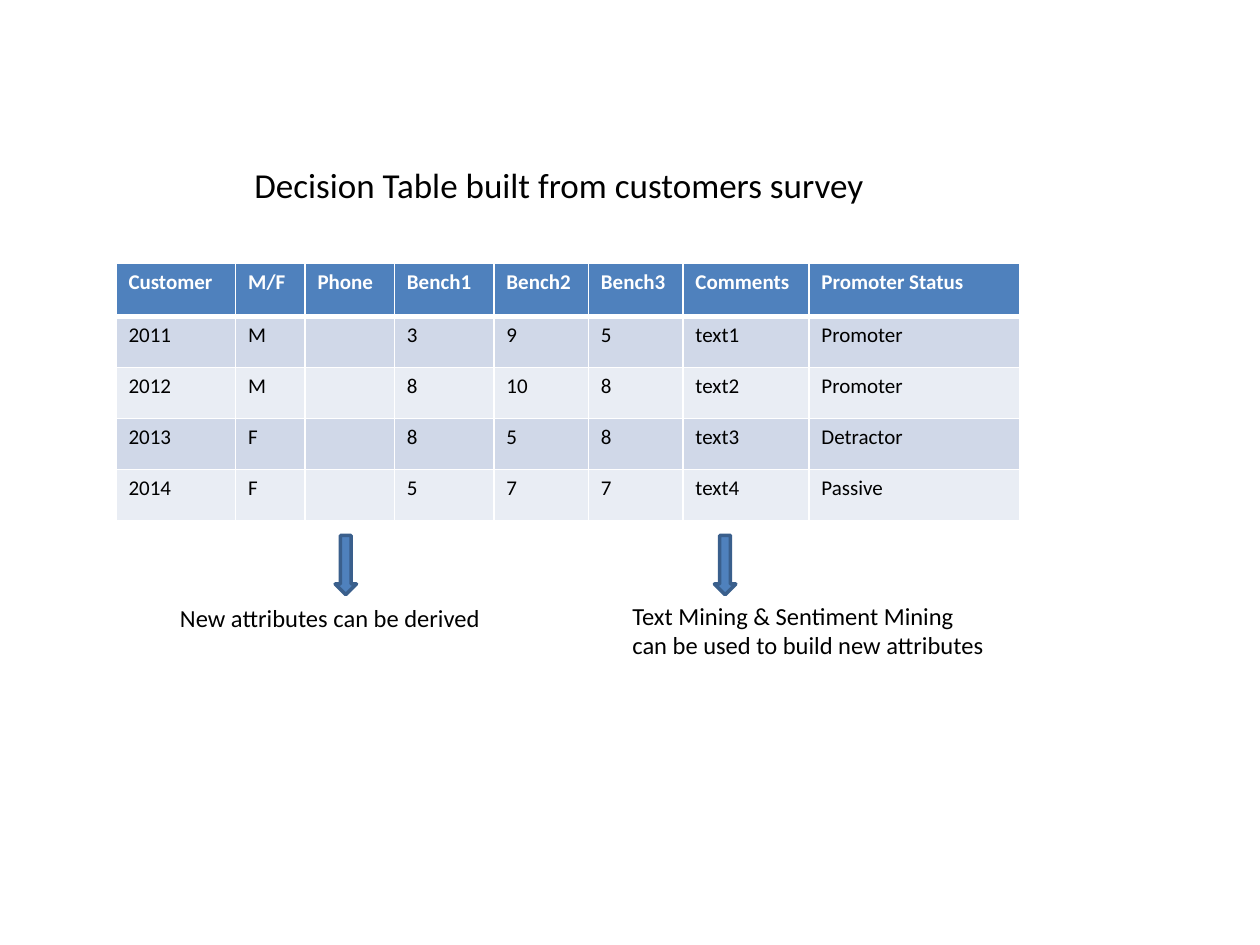
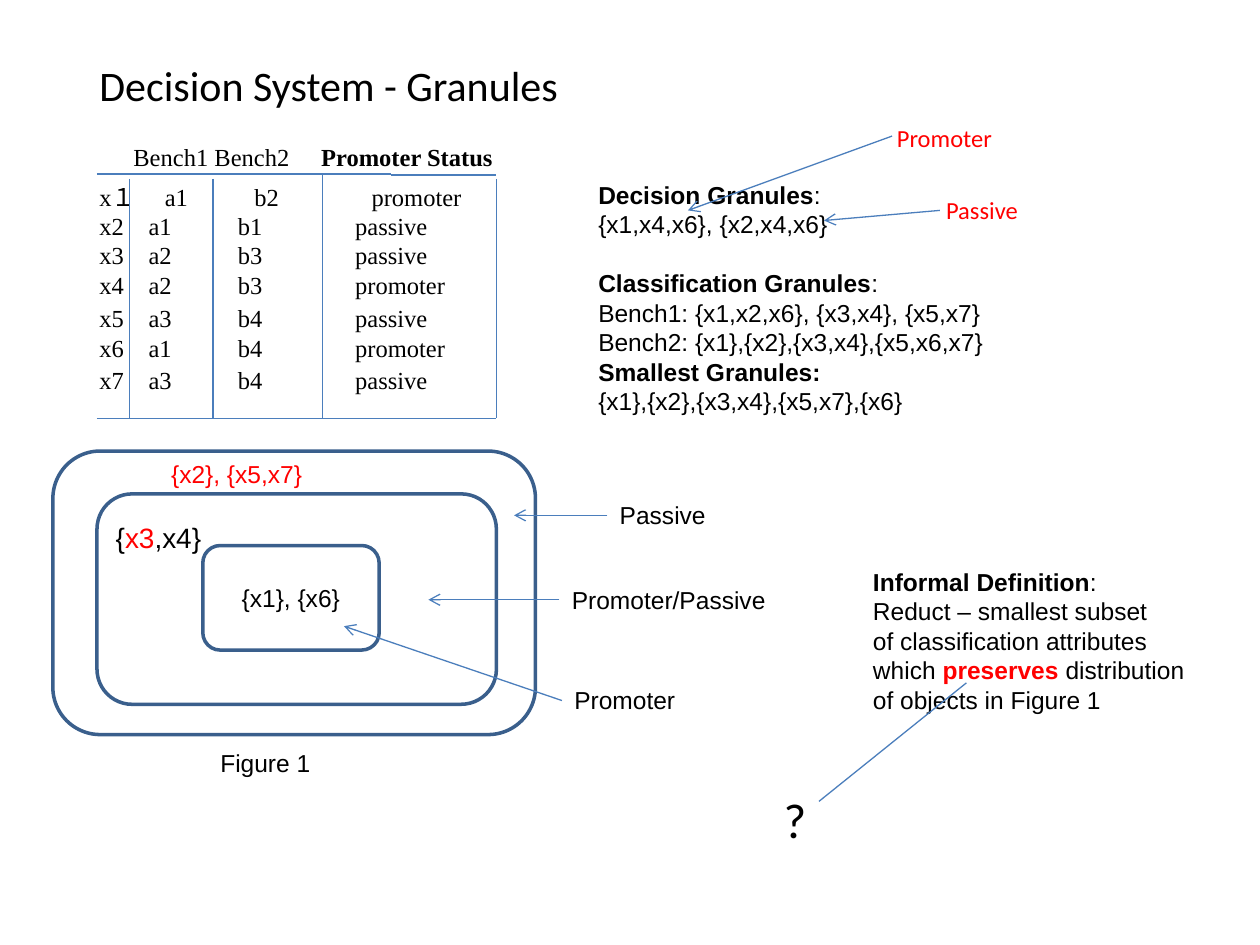
from dataclasses import dataclass
from typing import NamedTuple, Optional

import pptx
import pptx.dml.color
import pptx.enum.shapes
import pptx.enum.text
import pptx.oxml.ns
import pptx.util
from lxml import etree
from pptx.util import Inches

qn = pptx.oxml.ns.qn
SHAPES = pptx.enum.shapes.MSO_SHAPE


@dataclass(frozen=True)
class Theme:
    black: str = "000000"
    white: str = "FFFFFF"
    red: str = "FF0000"
    blue: str = "4F81BD"
    outline: str = "3A5F8C"
    line: str = "4B7EBC"
    bands: tuple = ("D0D8E8", "E9EDF4")
    sans: str = "Calibri"
    arial: str = "Arial"
    serif: str = "Times New Roman"
    cell: int = 12
    body: int = 14
    set_size: int = 16
    table_title: int = 20
    title: int = 24
    question: int = 28


T = Theme()


class Run(NamedTuple):
    text: str
    bold: bool = False
    color: str = T.black


class Para(NamedTuple):
    runs: tuple
    before: float = 0
    spacing: Optional[float] = None
    tabs: tuple = ()


class Box(NamedTuple):
    left: float
    top: float
    width: float
    height: float
    paras: tuple
    font: str = T.arial
    size: int = T.body
    wrap: bool = False


class Line(NamedTuple):
    x1: float
    y1: float
    x2: float
    y2: float
    arrow: bool = False


class Level(NamedTuple):
    """A label of the nested figure and the point its arrow reaches."""
    label: Box
    x: float
    y: float


def plain(*lines: str, color: str = T.black) -> tuple:
    return tuple(Para((Run(line, color=color),)) for line in lines)


def heading(text: str, before: float = 0) -> Para:
    return Para((Run(text, True), Run(":")), before)


def rgb(color: str) -> pptx.dml.color.RGBColor:
    return pptx.dml.color.RGBColor.from_string(color)


def add_run(p, run: Run, font: str, size: int) -> None:
    r = p.add_run()
    r.text = run.text
    r.font.name = font
    r.font.size = pptx.util.Pt(size)
    r.font.bold = run.bold
    r.font.color.rgb = rgb(run.color)


def set_tabs(p, stops: tuple) -> None:
    tab_list = etree.SubElement(p._p.get_or_add_pPr(), qn("a:tabLst"))
    for stop in stops:
        etree.SubElement(tab_list, qn("a:tab"), pos=str(Inches(stop)), algn="l")


def add_box(s, box: Box):
    sp = s.shapes.add_textbox(*map(Inches, box[:4]))
    tf = sp.text_frame
    tf.word_wrap = box.wrap
    tf.auto_size = pptx.enum.text.MSO_AUTO_SIZE.SHAPE_TO_FIT_TEXT
    for i, para in enumerate(box.paras):
        p = tf.add_paragraph() if i else tf.paragraphs[0]
        if para.spacing:
            p.line_spacing = para.spacing
        if para.before:
            p.space_before = pptx.util.Pt(para.before)
        if para.tabs:
            set_tabs(p, para.tabs)
        for run in para.runs:
            add_run(p, run, box.font, box.size)
    return sp


def add_line(s, line: Line):
    cxn = s.shapes.add_connector(pptx.enum.shapes.MSO_CONNECTOR.STRAIGHT,
                                 *map(Inches, line[:4]))
    cxn.line.color.rgb = rgb(T.line)
    cxn.line.width = pptx.util.Pt(0.75)
    if line.arrow:
        etree.SubElement(cxn.line._get_or_add_ln(), qn("a:tailEnd"), type="arrow")
    etree.SubElement(cxn._element.spPr, qn("a:effectLst"))
    return cxn


def add_outlined(s, kind, place: tuple, fill: Optional[str] = None) -> None:
    sp = s.shapes.add_shape(kind, *map(Inches, place))
    sp.shadow.inherit = False
    if fill:
        sp.fill.solid()
        sp.fill.fore_color.rgb = rgb(fill)
    else:
        sp.fill.background()
    sp.line.color.rgb = rgb(T.outline)
    sp.line.width = pptx.util.Pt(2)


def set_borders(cell, top: float, bottom: float) -> None:
    tc_pr = cell._tc.get_or_add_tcPr()
    for side, width in (("L", 1), ("R", 1), ("T", top), ("B", bottom)):
        ln = etree.SubElement(tc_pr, qn(f"a:ln{side}"), w=str(pptx.util.Pt(width)))
        fill = etree.SubElement(ln, qn("a:solidFill"))
        etree.SubElement(fill, qn("a:srgbClr"), val=T.white)


SURVEY = (
    ("Customer", "M/F", "Phone", "Bench1", "Bench2", "Bench3", "Comments",
     "Promoter Status"),
    ("2011", "M", "", "3", "9", "5", "text1", "Promoter"),
    ("2012", "M", "", "8", "10", "8", "text2", "Promoter"),
    ("2013", "F", "", "8", "5", "8", "text3", "Detractor"),
    ("2014", "F", "", "5", "7", "7", "text4", "Passive"),
)
SURVEY_COLUMNS = (0.95, 0.55, 0.71, 0.79, 0.75, 0.75, 1, 1.67)


def add_survey_table(s) -> None:
    table = s.shapes.add_table(len(SURVEY), len(SURVEY_COLUMNS), Inches(0.92),
                               Inches(2.09), Inches(7.17), Inches(2.03)).table
    table.horz_banding = False
    for column, width in zip(table.columns, SURVEY_COLUMNS):
        column.width = Inches(width)
    for i, values in enumerate(SURVEY):
        header = i == 0
        table.rows[i].height = Inches(0.42 if header else 0.4)
        for j, value in enumerate(values):
            cell = table.cell(i, j)
            set_borders(cell, 3 if i == 1 else 1, 3 if header else 1)
            cell.fill.solid()
            cell.fill.fore_color.rgb = rgb(T.blue if header else T.bands[(i - 1) % 2])
            if value:
                run = Run(value, header, T.white if header else T.black)
                add_run(cell.text_frame.paragraphs[0], run, T.sans, T.cell)


def build_survey(s) -> None:
    add_survey_table(s)
    for box in (
        Box(1.92, 1.25, 5.08, 0.44, plain("Decision Table built from customers survey"),
            T.sans, T.table_title),
        Box(1.33, 4.74, 2.65, 0.34, plain("New attributes can be derived"), T.sans),
        Box(4.92, 4.72, 3.02, 0.57, plain("Text Mining & Sentiment Mining",
                                          "can be used to build new attributes"), T.sans),
    ):
        add_box(s, box)
    for left in (2.66, 5.67):
        add_outlined(s, SHAPES.DOWN_ARROW, (left, 4.25, 0.17, 0.47), T.blue)


OBJECTS = (
    ("x１", "a1", "b2", "promoter", 0.9),
    ("x2", "a1", "b1", "passive", 0.5),
    ("x3", "a2", "b3", "passive", 0.6),
    ("x4", "a2", "b3", "promoter", 0.6),
    ("x5", "a3", "b4", "passive", 0.7),
    ("x6", "a1", "b4", "promoter", 0.6),
    ("x7", "a3", "b4", "passive", 0.7),
)
OBJECT_TABS = (0.39, 1.1, 2.03)
FIRST_ROW_SHIFT = 0.13


def object_rows() -> tuple:
    rows = []
    for i, (*values, spacing) in enumerate(OBJECTS):
        shift = 0 if i else FIRST_ROW_SHIFT
        rows.append(Para((Run("\t".join(values)),), 7 if i else 0, spacing,
                         tuple(stop + shift for stop in OBJECT_TABS)))
    return tuple(rows)


def add_object_table(s) -> None:
    header = Para((Run("\tBench1 Bench2\t"), Run("Promoter Status", True)),
                  tabs=(0.77, 2.26))
    add_box(s, Box(0.19, 1.08, 4.25, 0.34, (header,), T.serif, wrap=True))
    add_box(s, Box(0.69, 1.42, 3.75, 1.9, object_rows(), T.serif, wrap=True))
    left, right, bottom = 0.77, 3.94, 3.32
    for line in (Line(left, 1.38, 3.1, 1.38), Line(3.1, 1.39, right, 1.39),
                 Line(left, bottom, right, bottom)):
        add_line(s, line)
    for x, top in ((1.03, 1.42), (1.69, 1.42), (2.56, 1.39), (right, 1.42)):
        add_line(s, Line(x, top, x, bottom))


NESTED_SETS = ((0.42, 3.58, 3.83, 2.25), (0.77, 3.92, 3.17, 1.67),
               (1.61, 4.33, 1.4, 0.83))
LEVELS = (
    Level(Box(4.82, 3.92, 0.89, 0.34, plain("Passive")), 4.08, 4.09),
    Level(Box(4.44, 4.59, 1.75, 0.34, plain("Promoter/Passive")), 3.4, 4.76),
    Level(Box(4.46, 5.39, 1.01, 0.34, plain("Promoter")), 2.73, 4.97),
)


def add_nested_figure(s) -> None:
    for place in NESTED_SETS:
        add_outlined(s, SHAPES.ROUNDED_RECTANGLE, place)
    for level in LEVELS:
        box = level.label
        label = add_box(s, box)
        arrow = add_line(s, Line(box.left, box.top + box.height / 2,
                                 level.x, level.y, True))
        arrow.begin_connect(label, 1)
    boundary = Para((Run("{"), Run("x3", color=T.red), Run(",x4}")))
    for box in (
        Box(1.82, 4.58, 0.98, 0.34, plain("{x1}, {x6}")),
        Box(0.82, 4.08, 0.89, 0.37, (boundary,), size=T.set_size),
        Box(1.26, 3.59, 1.25, 0.34, plain("{x2}, {x5,x7}", color=T.red)),
        Box(1.65, 5.89, 0.92, 0.34, plain("Figure 1")),
    ):
        add_box(s, box)


GRANULES = (
    heading("Decision Granules"),
    *plain("{x1,x4,x6}, {x2,x4,x6}"),
    heading("Classification Granules", before=16.8),
    *plain("Bench1: {x1,x2,x6}, {x3,x4}, {x5,x7}",
           "Bench2: {x1},{x2},{x3,x4},{x5,x6,x7}"),
    Para((Run("Smallest Granules:", True),)),
    *plain("{x1},{x2},{x3,x4},{x5,x7},{x6}"),
)
DEFINITION = (
    heading("Informal Definition"),
    *plain("Reduct – smallest subset", "of classification attributes"),
    Para((Run("which "), Run("preserves", True, T.red), Run(" distribution"))),
    *plain("of objects in Figure 1"),
)


def build_granules(s) -> None:
    add_object_table(s)
    add_nested_figure(s)
    for box in (
        Box(0.69, 0.42, 3.88, 0.5, plain("Decision System - Granules"), T.sans, T.title),
        Box(4.65, 1.38, 3.27, 1.99, GRANULES),
        Box(6.83, 4.45, 2.68, 1.28, DEFINITION),
        Box(6.12, 6.22, 0.38, 0.57, plain("?"), T.sans, T.question),
        Box(7.02, 0.93, 0.96, 0.34, plain("Promoter", color=T.red), T.sans),
        Box(7.41, 1.5, 0.78, 0.34, plain("Passive", color=T.red), T.sans),
    ):
        add_box(s, box)
    for line in (Line(7.67, 5.42, 6.5, 6.36), Line(7.08, 1.08, 5.46, 1.67, True),
                 Line(7.46, 1.67, 6.54, 1.75, True)):
        add_line(s, line)


def main() -> None:
    prs = pptx.Presentation()
    prs.slide_width, prs.slide_height = Inches(10), Inches(7.5)
    for build in (build_survey, build_granules):
        build(prs.slides.add_slide(prs.slide_layouts[6]))
    prs.save("out.pptx")


if __name__ == "__main__":
    main()
